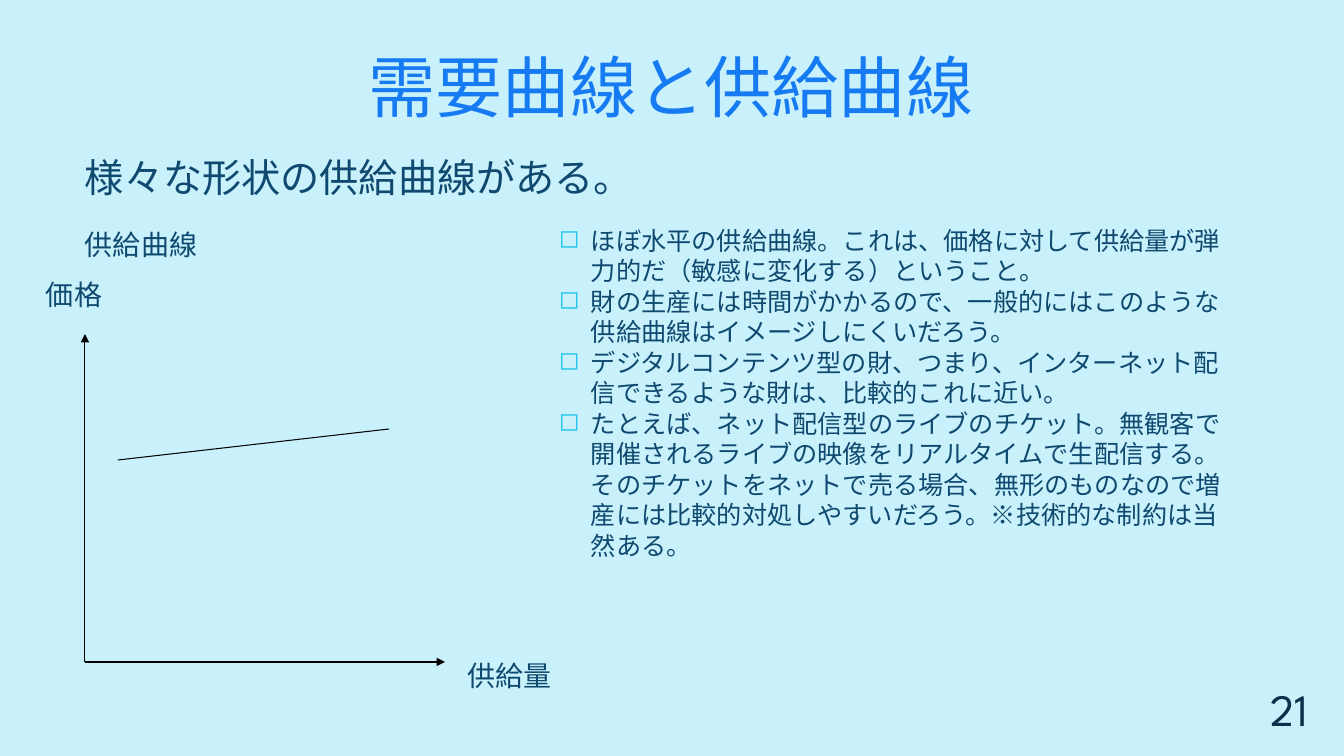
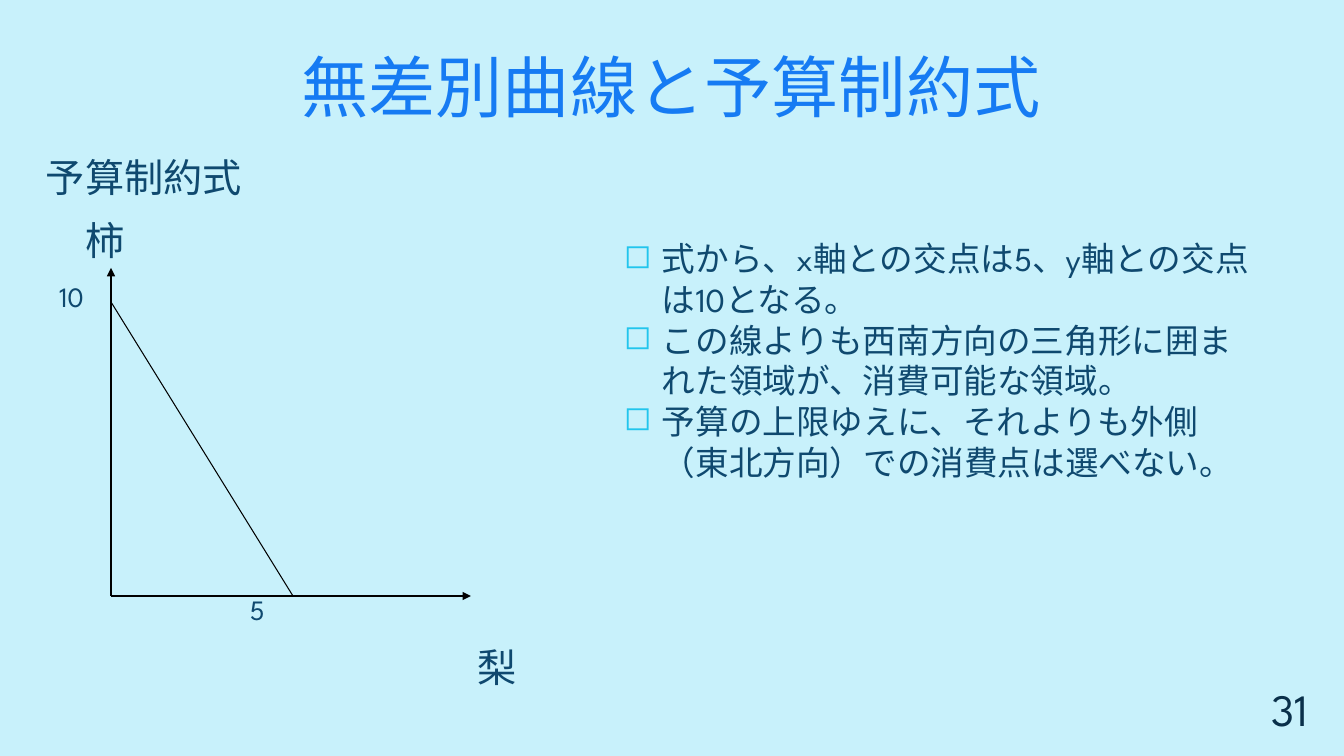
from lxml.etree import SubElement
from pptx import Presentation
from pptx.dml.color import RGBColor
from pptx.enum.shapes import MSO_CONNECTOR
from pptx.enum.text import MSO_ANCHOR, PP_ALIGN
from pptx.oxml.ns import qn
from pptx.util import Emu, Pt

SCALE = 914400 / 100.8
SLIDE_WIDTH, SLIDE_HEIGHT = 1344, 756
TITLE_ONLY = 5
FONT = "League Spartan"
LINE_HEIGHT = 1.21
AXIS_WIDTH, AXIS_HEIGHT = 360, 328

BACKGROUND = RGBColor(0xC8, 0xF1, 0xFB)
TITLE_BLUE = RGBColor(0x16, 0x7B, 0xF3)
TEXT_BLUE = RGBColor(0x0F, 0x49, 0x6F)
NUMBER_NAVY = RGBColor(0x0A, 0x30, 0x4A)
BULLET_CYAN = RGBColor(0x22, 0xC5, 0xED)
BLACK = RGBColor(0, 0, 0)


def px(length):
    return Emu(round(length * SCALE))


def add_run(paragraph, text, size, color):
    run = paragraph.add_run()
    run.text = text
    run.font.size = Pt(size)
    run.font.name = FONT
    run.font.color.rgb = color
    properties = run._r.get_or_add_rPr()
    SubElement(properties, qn("a:ea")).set("typeface", FONT)


def add_text_box(slide, left, top, width, height, anchor=MSO_ANCHOR.TOP):
    box = slide.shapes.add_textbox(px(left), px(top), px(width), px(height))
    frame = box.text_frame
    frame.word_wrap = True
    frame.vertical_anchor = anchor
    return frame


def add_title(slide, text):
    title = slide.shapes.title
    title.left, title.top = px(36), px(36)
    title.width, title.height = px(1270), px(95)
    frame = title.text_frame
    frame.vertical_anchor = MSO_ANCHOR.BOTTOM
    paragraph = frame.paragraphs[0]
    paragraph.alignment = PP_ALIGN.CENTER
    add_run(paragraph, text, 48, TITLE_BLUE)


def add_page_number(slide, number):
    frame = add_text_box(slide, 1242, 679, 76, 61, MSO_ANCHOR.BOTTOM)
    paragraph = frame.paragraphs[0]
    paragraph.alignment = PP_ALIGN.RIGHT
    add_run(paragraph, str(number), 32, NUMBER_NAVY)


def add_label(slide, text, left, middle, size=20):
    width = round(len(text) * size * 1.4) + 20
    frame = add_text_box(slide, left, middle - 25, width, 50, MSO_ANCHOR.MIDDLE)
    frame.margin_left = frame.margin_right = 0
    frame.margin_top = frame.margin_bottom = 0
    paragraph = frame.paragraphs[0]
    paragraph.line_spacing = Pt(size * LINE_HEIGHT)
    add_run(paragraph, text, size, TEXT_BLUE)


def add_bullet(paragraph, indent):
    properties = paragraph._p.get_or_add_pPr()
    properties.set("marL", str(px(indent)))
    properties.set("indent", str(-px(indent)))
    color = SubElement(properties, qn("a:buClr"))
    SubElement(color, qn("a:srgbClr")).set("val", str(BULLET_CYAN))
    SubElement(properties, qn("a:buChar")).set("char", "◻")


def add_bullet_list(slide, items, left, top, width, height, size, indent):
    frame = add_text_box(slide, left, top, width, height)
    for index, item in enumerate(items):
        paragraph = frame.add_paragraph() if index else frame.paragraphs[0]
        add_bullet(paragraph, indent)
        paragraph.line_spacing = Pt(size * LINE_HEIGHT)
        add_run(paragraph, item, size, TEXT_BLUE)


def add_line(slide, start, end, arrow=False):
    points = [px(value) for value in (*start, *end)]
    line = slide.shapes.add_connector(MSO_CONNECTOR.STRAIGHT, *points)
    line.line.color.rgb = BLACK
    line.line.width = Pt(0.75)
    if arrow:
        SubElement(line.line._get_or_add_ln(), qn("a:tailEnd")).set("type", "triangle")
    SubElement(line._element.spPr, qn("a:effectLst"))


def add_axes(slide, x, y):
    for end in ((x, y - AXIS_HEIGHT), (x + AXIS_WIDTH, y)):
        add_line(slide, (x, y), end, arrow=True)


def add_titled_slide(presentation, title, number):
    slide = presentation.slides.add_slide(presentation.slide_layouts[TITLE_ONLY])
    add_title(slide, title)
    add_page_number(slide, number)
    return slide


def add_supply_slide(presentation):
    slide = add_titled_slide(presentation, "需要曲線と供給曲線", 21)
    add_label(slide, "様々な形状の供給曲線がある。", 85, 177, 28)
    add_label(slide, "供給曲線", 85, 244)
    add_label(slide, "価格", 46, 294)
    add_label(slide, "供給量", 467, 675)
    add_axes(slide, 85, 662)
    add_line(slide, (118, 460), (389, 429))
    items = [
        "ほぼ水平の供給曲線。これは、価格に対して供給量が弾力的だ（敏感に変化する）ということ。",
        "財の生産には時間がかかるので、一般的にはこのような供給曲線はイメージしにくいだろう。",
        "デジタルコンテンツ型の財、つまり、インターネット配信できるような財は、比較的これに近い。",
        "たとえば、ネット配信型のライブのチケット。無観客で開催されるライブの映像を"
        "リアルタイムで生配信する。そのチケットをネットで売る場合、無形のものなので"
        "増産には比較的対処しやすいだろう。※技術的な制約は当然ある。",
    ]
    add_bullet_list(slide, items, 549, 220, 703, 346, size=18, indent=32)


def add_budget_slide(presentation):
    slide = add_titled_slide(presentation, "無差別曲線と予算制約式", 31)
    add_label(slide, "予算制約式", 46, 177, 28)
    add_label(slide, "柿", 85, 240, 28)
    add_label(slide, "10", 59, 296)
    add_label(slide, "5", 250, 609)
    add_label(slide, "梨", 477, 667, 28)
    add_axes(slide, 111, 596)
    add_line(slide, (111, 302), (293, 596))
    items = [
        "式から、x軸との交点は5、y軸との交点は10となる。",
        "この線よりも西南方向の三角形に囲まれた領域が、消費可能な領域。",
        "予算の上限ゆえに、それよりも外側（東北方向）での消費点は選べない。",
    ]
    add_bullet_list(slide, items, 614, 233, 660, 254, size=24, indent=38)


def main():
    presentation = Presentation()
    presentation.slide_width = px(SLIDE_WIDTH)
    presentation.slide_height = px(SLIDE_HEIGHT)
    fill = presentation.slide_master.background.fill
    fill.solid()
    fill.fore_color.rgb = BACKGROUND
    add_supply_slide(presentation)
    add_budget_slide(presentation)
    presentation.save("out.pptx")


if __name__ == "__main__":
    main()
